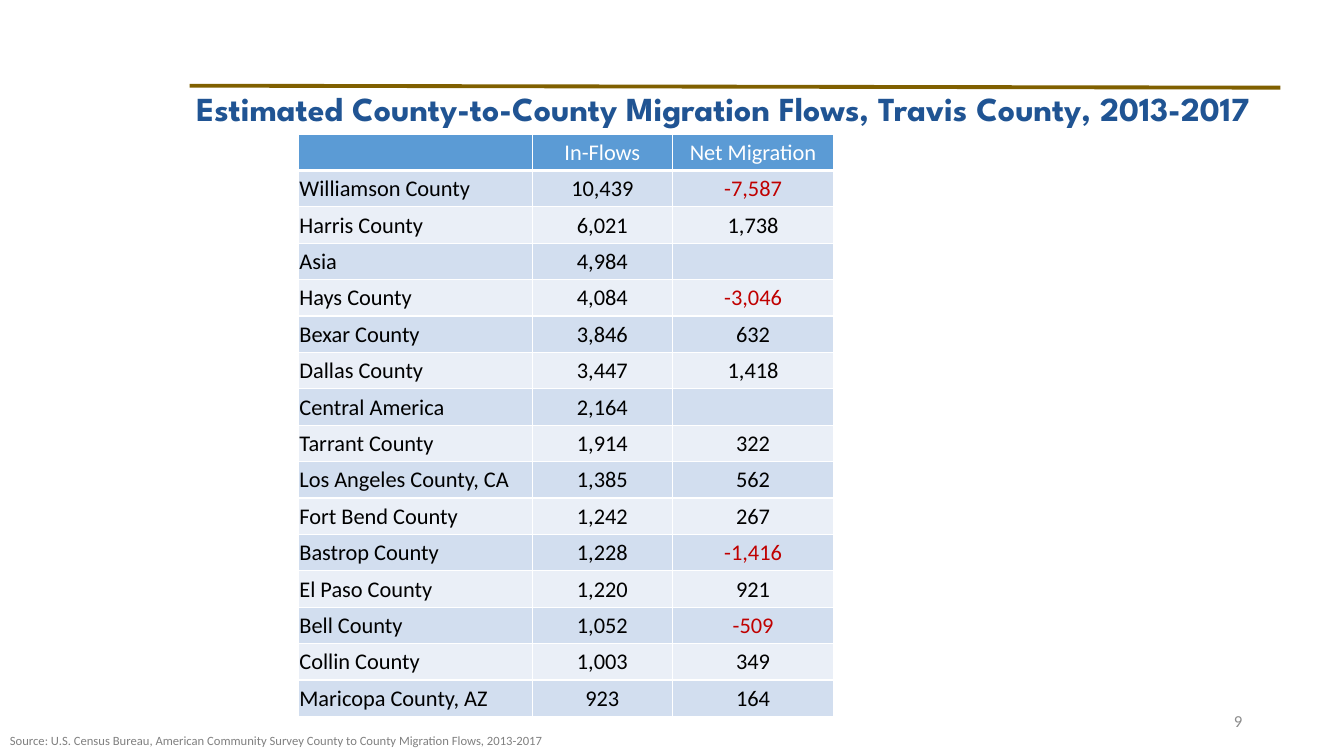
import pptx
import pptx.util
import pptx.dml.color
import pptx.enum.shapes
import pptx.enum.text
import pptx.oxml
from lxml import etree

Inches = pptx.util.Inches
Pt = pptx.util.Pt
RGBColor = pptx.dml.color.RGBColor
Align = pptx.enum.text.PP_ALIGN
Anchor = pptx.enum.text.MSO_ANCHOR
NS = "http://schemas.openxmlformats.org/drawingml/2006/main"

GOLD = RGBColor(0x80, 0x60, 0x00)
NAVY = RGBColor(0x20, 0x54, 0x93)
BLUE = RGBColor(0x5B, 0x9B, 0xD5)
BANDS = [RGBColor(0xD2, 0xDE, 0xEF), RGBColor(0xEA, 0xEF, 0xF7)]
WHITE = RGBColor(0xFF, 0xFF, 0xFF)
BLACK = RGBColor(0x00, 0x00, 0x00)
RED = RGBColor(0xC0, 0x00, 0x00)
GRAY = RGBColor(0x80, 0x80, 0x80)
SILVER = RGBColor(0x8C, 0x8C, 0x8C)

FLOWS = [
    ("", "In-Flows", "Net Migration"),
    ("Williamson County", "10,439", "-7,587"),
    ("Harris County", "6,021", "1,738"),
    ("Asia", "4,984", ""),
    ("Hays County", "4,084", "-3,046"),
    ("Bexar County", "3,846", "632"),
    ("Dallas County", "3,447", "1,418"),
    ("Central America", "2,164", ""),
    ("Tarrant County", "1,914", "322"),
    ("Los Angeles County, CA", "1,385", "562"),
    ("Fort Bend County", "1,242", "267"),
    ("Bastrop County", "1,228", "-1,416"),
    ("El Paso County", "1,220", "921"),
    ("Bell County", "1,052", "-509"),
    ("Collin County", "1,003", "349"),
    ("Maricopa County, AZ", "923", "164"),
]


def write(frame, text, size=16, color=BLACK, font="Calibri", bold=False,
          align=Align.LEFT, line=None):
    para = frame.paragraphs[0]
    para.alignment = align
    if line:
        para.line_spacing = line
    if text:
        run = para.add_run()
        run.text = text
        run.font.size = Pt(size)
        run.font.name = font
        run.font.bold = bold
        run.font.color.rgb = color


class Page:
    def __init__(self, slide, edge=WHITE):
        self.slide = slide
        self.edge = edge

    def rule(self, start, end, color, width):
        ends = [Inches(n) for n in start + end]
        line = self.slide.shapes.add_connector(
            pptx.enum.shapes.MSO_CONNECTOR.STRAIGHT, *ends)
        line.line.color.rgb = color
        line.line.width = Pt(width)
        etree.SubElement(line._element.spPr, f"{{{NS}}}effectLst")

    def label(self, place, text, anchor=Anchor.TOP, **style):
        box = self.slide.shapes.add_textbox(*[Inches(n) for n in place])
        frame = box.text_frame
        frame.word_wrap = True
        frame.vertical_anchor = anchor
        write(frame, text, **style)

    def border(self, cell, top, base):
        props = cell._tc.get_or_add_tcPr()
        for side, width in (("L", 1), ("R", 1), ("T", top), ("B", base)):
            props.append(pptx.oxml.parse_xml(
                f'<a:ln{side} xmlns:a="{NS}" w="{Pt(width)}"><a:solidFill>'
                f'<a:srgbClr val="{self.edge}"/></a:solidFill></a:ln{side}>'))

    def cell(self, cell, text, row, col):
        head = row == 0
        self.border(cell, 3 if row == 1 else 1, 3 if head else 1)
        cell.fill.solid()
        cell.fill.fore_color.rgb = BLUE if head else BANDS[(row - 1) % 2]
        cell.vertical_anchor = Anchor.MIDDLE
        cell.margin_left = cell.margin_right = cell.margin_top = Inches(0.01)
        cell.margin_bottom = 0
        color = WHITE if head else RED if text.startswith("-") else BLACK
        write(cell.text_frame, text, color=color,
              align=Align.CENTER if col else Align.LEFT)

    def table(self, place, rows, widths):
        spot = [Inches(n) for n in place]
        grid = self.slide.shapes.add_table(len(rows), len(widths), *spot).table
        for col, width in zip(grid.columns, widths):
            col.width = Inches(width)
        for r, texts in enumerate(rows):
            for c, text in enumerate(texts):
                self.cell(grid.cell(r, c), text, r, c)


def main():
    deck = pptx.Presentation()
    deck.slide_width = Inches(13.33)
    deck.slide_height = Inches(7.5)
    page = Page(deck.slides.add_slide(deck.slide_layouts[6]))
    page.rule((1.88, 0.85), (12.7, 0.87), GOLD, 2.75)
    page.label((9.42, 6.95, 3, 0.4), "9", anchor=Anchor.MIDDLE, size=12,
               color=SILVER, align=Align.RIGHT)
    page.table((2.96, 1.33, 5.31, 5.78), FLOWS, (2.32, 1.39, 1.6))
    page.label((0, 7.22, 6.5, 0.25),
               "Source: U.S. Census Bureau, American Community Survey "
               "County to County Migration Flows, 2013-2017",
               size=9, color=GRAY)
    page.label((1.85, 0.87, 10.82, 6),
               "Estimated County-to-County Migration Flows, "
               "Travis County, 2013-2017",
               size=24, color=NAVY, font="League Spartan", bold=True, line=0.9)
    deck.save("out.pptx")


if __name__ == "__main__":
    main()
